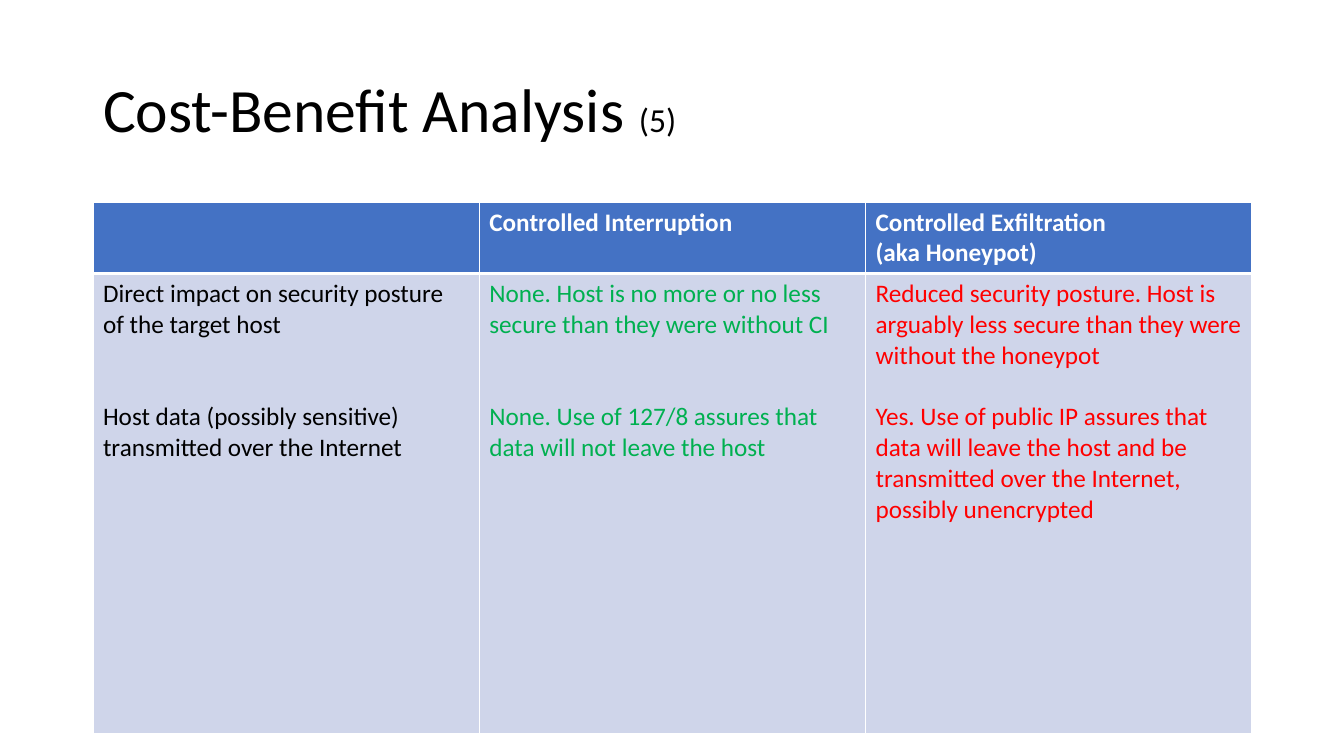
from lxml.etree import SubElement
from pptx import Presentation
from pptx.dml.color import RGBColor
from pptx.enum.text import MSO_ANCHOR, PP_ALIGN
from pptx.oxml.ns import qn
from pptx.util import Pt

PX = 914400 / 100.8
FONT = "Calibri"
WHITE, BLACK, GREEN, RED = "FFFFFF", "000000", "00B050", "FF0000"
HEADER_FILL, BODY_FILL = "4472C4", "CFD5EA"
LINE_HEIGHT = 22


def px(length):
    return round(length * PX)


def style_run(run, size, color, bold=False):
    run.font.name = FONT
    run.font.size = Pt(size)
    run.font.bold = bold
    run.font.color.rgb = RGBColor.from_string(color)


presentation = Presentation()
presentation.slide_width = px(1344)
presentation.slide_height = px(756)
slide = presentation.slides.add_slide(presentation.slide_layouts[5])

title = slide.shapes.title
title.left, title.top, title.width, title.height = px(93), px(40), px(1159), px(146)
title.text_frame.vertical_anchor = MSO_ANCHOR.MIDDLE
title.text_frame.text = "Cost-Benefit Analysis "
paragraph = title.text_frame.paragraphs[0]
paragraph.alignment = PP_ALIGN.LEFT
paragraph.line_spacing = 0.9
paragraph.add_run().text = "(5)"
for run, size in zip(paragraph.runs, (44, 24)):
    style_run(run, size, BLACK)

columns = [
    ("", BLACK, 2, [
        "Direct impact on security posture of the target host",
        "Host data (possibly sensitive) transmitted over the Internet",
    ]),
    ("Controlled Interruption", GREEN, 2, [
        "None. Host is no more or no less secure than they were without CI",
        "None. Use of 127/8 assures that data will not leave the host",
    ]),
    ("Controlled Exfiltration \v(aka Honeypot)", RED, 1, [
        "Reduced security posture. Host is arguably less secure than they were without the honeypot",
        "Yes. Use of public IP assures that data will leave the host and be "
        "transmitted over the Internet, possibly unencrypted",
    ]),
]

table = slide.shapes.add_table(2, 3, px(93), px(202), px(1159), px(530)).table
table.rows[0].height = px(70)
table.rows[1].height = px(460)

for column_index, (heading, color, gap_lines, points) in enumerate(columns):
    table.columns[column_index].width = px(1159 / 3)
    rows = [
        ([heading], WHITE, True, HEADER_FILL, {"L": 1, "R": 1, "T": 1, "B": 3}),
        (points, color, False, BODY_FILL, {"L": 1, "R": 1, "T": 3, "B": 1}),
    ]
    for row_index, (texts, text_color, bold, fill, borders) in enumerate(rows):
        cell = table.cell(row_index, column_index)
        properties = cell._tc.get_or_add_tcPr()
        for side, width in borders.items():
            line = SubElement(properties, qn(f"a:ln{side}"), w=str(Pt(width)))
            SubElement(SubElement(line, qn("a:solidFill")), qn("a:srgbClr"), val=WHITE)
        cell.fill.solid()
        cell.fill.fore_color.rgb = RGBColor.from_string(fill)
        cell.text_frame.text = "\n".join(texts)
        for paragraph_index, paragraph in enumerate(cell.text_frame.paragraphs):
            paragraph.space_before = Pt(paragraph_index * gap_lines * LINE_HEIGHT)
            for run in paragraph.runs:
                style_run(run, 18, text_color, bold)

presentation.save("out.pptx")
